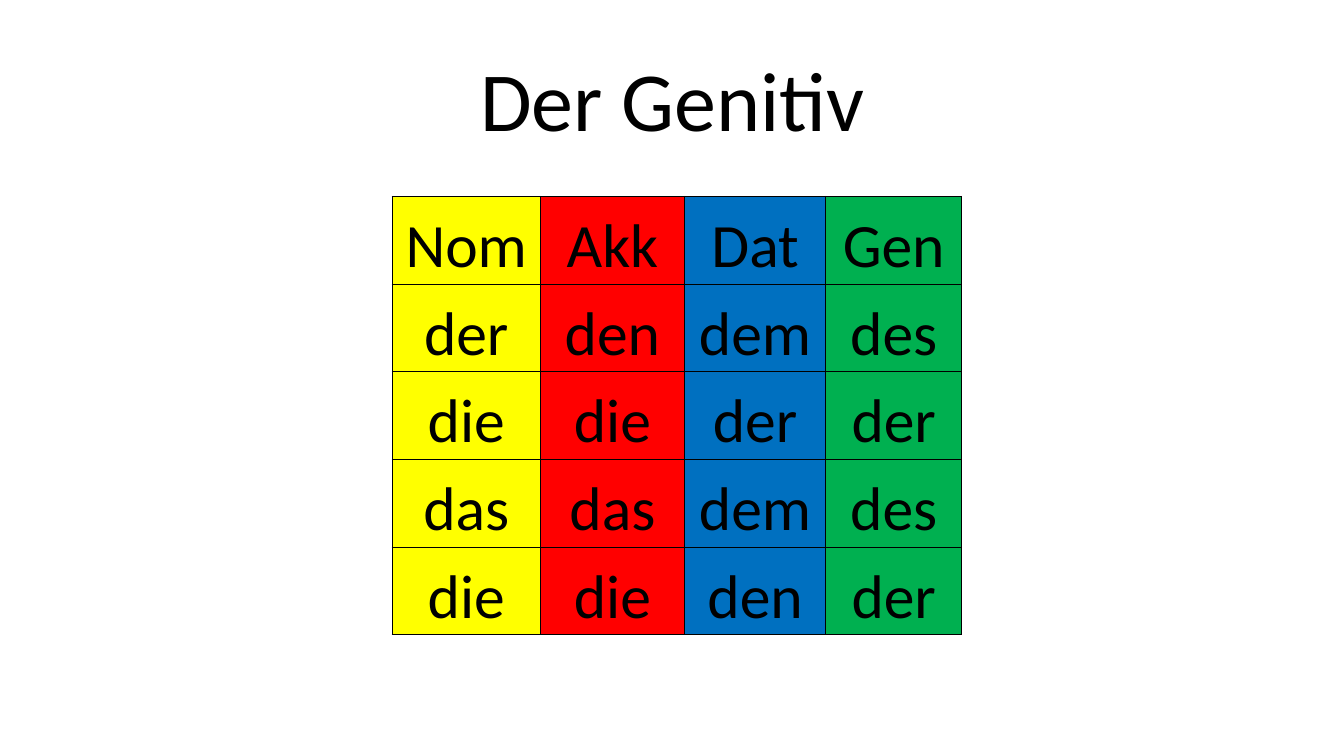
from pptx import Presentation
from pptx.dml.color import RGBColor
from pptx.enum.text import MSO_ANCHOR, MSO_AUTO_SIZE, PP_ALIGN
from pptx.oxml.ns import qn
from pptx.util import Inches, Pt
from lxml import etree

BOTTOM = MSO_ANCHOR.BOTTOM
CENTER = PP_ALIGN.CENTER
FIXED = MSO_AUTO_SIZE.NONE
COLORS = {
    "ink": "000000",
    "yellow": "FFFF00",
    "red": "FF0000",
    "blue": "0070C0",
    "green": "00B050",
}
CASES = [
    ("yellow", 1.47),
    ("red", 1.43),
    ("blue", 1.4),
    ("green", 1.35),
]
ROWS = [
    ["Nom", "Akk", "Dat", "Gen"],
    ["der", "den", "dem", "des"],
    ["die", "die", "der", "der"],
    ["das", "das", "dem", "des"],
    ["die", "die", "den", "der"],
]


class Board:
    def __init__(self, slide, font="Calibri"):
        self.slide = slide
        self.font = font

    def style(self, para, size):
        para.alignment = CENTER
        para.font.name = self.font
        para.font.size = Pt(size)
        para.font.color.rgb = RGBColor.from_string(COLORS["ink"])

    def title(self, text, left, top, width, height):
        shape = self.slide.shapes.title
        shape.left, shape.top = Inches(left), Inches(top)
        shape.width, shape.height = Inches(width), Inches(height)
        frame = shape.text_frame
        frame.text = text
        frame.word_wrap = True
        frame.auto_size = FIXED
        frame.vertical_anchor = BOTTOM
        para = frame.paragraphs[0]
        para.line_spacing = 0.9
        self.style(para, 60)

    def border(self, cell):
        props = cell._tc.get_or_add_tcPr()
        for side in ("a:lnL", "a:lnR", "a:lnT", "a:lnB"):
            line = etree.SubElement(props, qn(side), w=str(Pt(1)))
            fill = etree.SubElement(line, qn("a:solidFill"))
            etree.SubElement(fill, qn("a:srgbClr"), val=COLORS["ink"])

    def cell(self, cell, text, color):
        cell.text = text
        cell.vertical_anchor = BOTTOM
        cell.margin_left = cell.margin_right = cell.margin_top = Inches(0.01)
        cell.margin_bottom = 0
        self.style(cell.text_frame.paragraphs[0], 44)
        self.border(cell)
        cell.fill.solid()
        cell.fill.fore_color.rgb = RGBColor.from_string(COLORS[color])

    def table(self, rows, cases, left, top, height):
        width = sum(size for _, size in cases)
        table = self.slide.shapes.add_table(
            len(rows), len(cases),
            Inches(left), Inches(top), Inches(width), Inches(height),
        ).table
        table.first_row = table.horz_banding = False
        for col, (color, size) in enumerate(cases):
            table.columns[col].width = Inches(size)
            for row, words in enumerate(rows):
                self.cell(table.cell(row, col), words[col], color)


def main():
    deck = Presentation()
    deck.slide_width, deck.slide_height = Inches(13.33), Inches(7.5)
    board = Board(deck.slides.add_slide(deck.slide_layouts[5]))
    board.title("Der Genitiv", 1.67, 0.06, 10, 1.48)
    board.table(ROWS, CASES, 3.89, 1.95, 4.35)
    deck.save("out.pptx")


if __name__ == "__main__":
    main()
